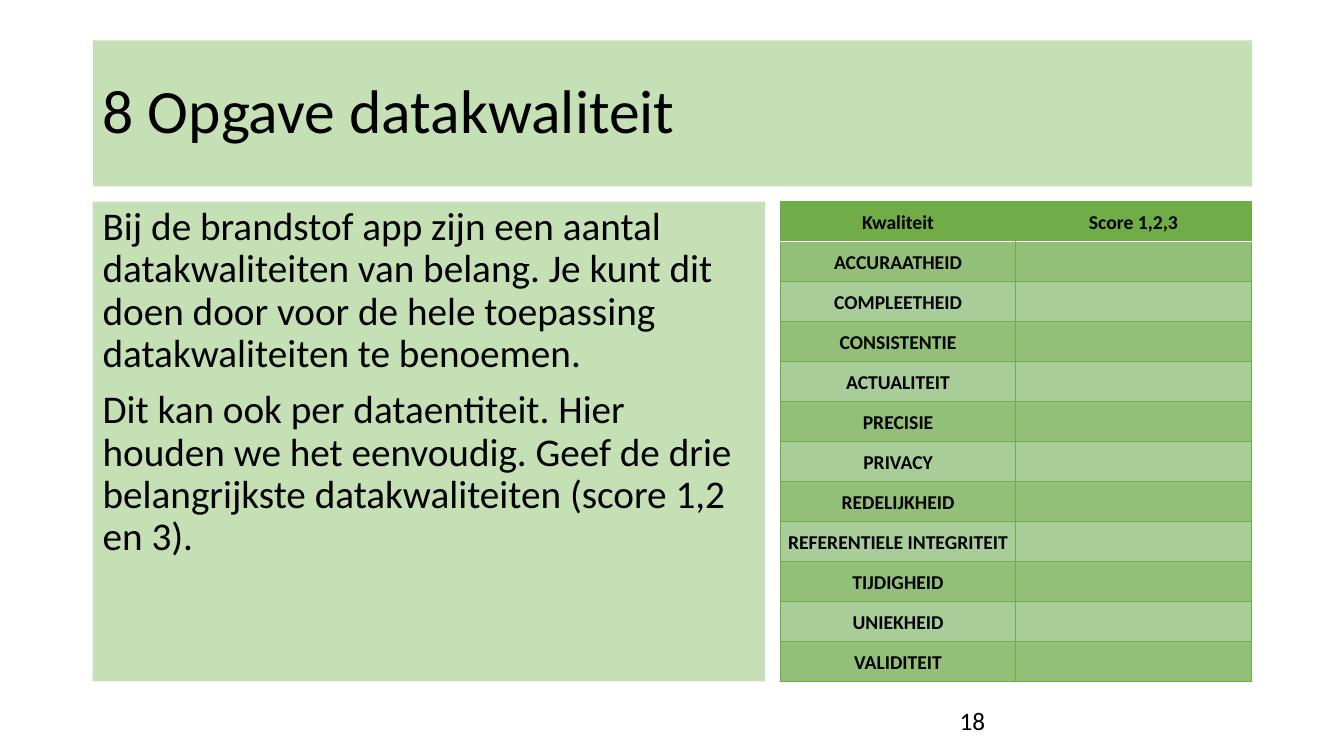
from dataclasses import dataclass

import pptx
import pptx.dml.color
import pptx.enum.text
import pptx.oxml
import pptx.oxml.ns
import pptx.util
from pptx.util import Inches

ALIGN = pptx.enum.text.PP_ALIGN
ANCHOR = pptx.enum.text.MSO_ANCHOR


@dataclass(frozen=True)
class Theme:
    font: str = "Calibri"
    text: str = "000000"
    panel: str = "C5E0B4"
    green: str = "70AD47"
    dark_row: str = "92C078"
    light_row: str = "A9CD99"
    white: str = "FFFFFF"
    title_size: int = 44
    body_size: int = 28
    number_size: int = 18
    table_size: int = 14


@dataclass(frozen=True)
class Box:
    left: float
    top: float
    width: float
    height: float

    def lengths(self) -> tuple:
        return tuple(Inches(v) for v in (self.left, self.top, self.width, self.height))


@dataclass(frozen=True)
class Edge:
    color: str | None
    width: float = 0.5


THEME = Theme()
TITLE_BOX = Box(0.92, 0.4, 11.5, 1.45)
BODY_BOX = Box(0.92, 2, 6.67, 4.76)
TABLE_BOX = Box(7.74, 2, 4.67, 4.76)
NUMBER_BOX = Box(9.42, 6.95, 3, 0.4)

BODY = [
    "Bij de brandstof app zijn een aantal datakwaliteiten van belang. Je kunt dit "
    "doen door voor de hele toepassing datakwaliteiten te benoemen.",
    "Dit kan ook per dataentiteit. Hier houden we het eenvoudig. Geef de drie "
    "belangrijkste datakwaliteiten (score 1,2 en 3).",
]
HEADER = ["Kwaliteit", "Score 1,2,3"]
QUALITIES = [
    "ACCURAATHEID", "COMPLEETHEID", "CONSISTENTIE", "ACTUALITEIT", "PRECISIE", "PRIVACY",
    "REDELIJKHEID", "REFERENTIELE INTEGRITEIT", "TIJDIGHEID", "UNIEKHEID", "VALIDITEIT",
]


def rgb(color: str) -> pptx.dml.color.RGBColor:
    return pptx.dml.color.RGBColor.from_string(color)


def paint(fill, color: str) -> None:
    fill.solid()
    fill.fore_color.rgb = rgb(color)


def style(p, size: int, align=ALIGN.LEFT, spacing: float = 1.0, bold: bool = False) -> None:
    p.alignment = align
    p.line_spacing = spacing
    p.font.name = THEME.font
    p.font.size = pptx.util.Pt(size)
    p.font.bold = bold
    p.font.color.rgb = rgb(THEME.text)


def fill_text(sp, lines: list[str], size: int, anchor, spacing: float, gap: float = 0) -> None:
    tf = sp.text_frame
    tf.word_wrap = True
    tf.auto_size = pptx.enum.text.MSO_AUTO_SIZE.NONE
    tf.vertical_anchor = anchor
    for i, line in enumerate(lines):
        p = tf.add_paragraph() if i else tf.paragraphs[0]
        p.text = line
        style(p, size, spacing=spacing)
        if i:
            p.space_before = pptx.util.Pt(gap)


def set_edges(cell, edges: dict[str, Edge]) -> None:
    tc_pr = cell._tc.get_or_add_tcPr()
    for side in "LRTB":
        edge = edges[side]
        paint_xml = (f'<a:solidFill><a:srgbClr val="{edge.color}"/></a:solidFill>'
                     if edge.color else "<a:noFill/>")
        tc_pr.append(pptx.oxml.parse_xml(
            f'<a:ln{side} {pptx.oxml.ns.nsdecls("a")} w="{pptx.util.Pt(edge.width)}">'
            f"{paint_xml}</a:ln{side}>"))


def cell_edges(row: int, col: int) -> dict[str, Edge]:
    edges = {side: Edge(THEME.green) for side in "LRTB"}
    if row == 0:
        edges["R" if col == 0 else "L"] = Edge(None)
        edges["B"] = Edge(THEME.white, 1)
    elif row == 1:
        edges["T"] = Edge(THEME.white, 1)
    return edges


def add_score_table(s, box: Box) -> None:
    rows = [HEADER] + [[quality, ""] for quality in QUALITIES]
    table = s.shapes.add_table(len(rows), len(HEADER), *box.lengths()).table
    table.horz_banding = False
    for column in table.columns:
        column.width = Inches(box.width / len(HEADER))
    for r, values in enumerate(rows):
        table.rows[r].height = Inches(box.height / len(rows))
        color = THEME.green if r == 0 else THEME.dark_row if r % 2 else THEME.light_row
        for c, value in enumerate(values):
            cell = table.cell(r, c)
            cell.margin_left = cell.margin_right = Inches(0.02)
            cell.margin_top = cell.margin_bottom = 0
            cell.vertical_anchor = ANCHOR.MIDDLE
            set_edges(cell, cell_edges(r, c))
            paint(cell.fill, color)
            p = cell.text_frame.paragraphs[0]
            p.text = value
            style(p, THEME.table_size, ALIGN.CENTER, 1.1, bold=True)


def main() -> None:
    prs = pptx.Presentation()
    prs.slide_width, prs.slide_height = Inches(13.33), Inches(7.5)
    s = prs.slides.add_slide(prs.slide_layouts.get_by_name("Title Only"))

    # Title
    title = s.shapes.title
    title.left, title.top, title.width, title.height = TITLE_BOX.lengths()
    paint(title.fill, THEME.panel)
    fill_text(title, ["8 Opgave datakwaliteit"], THEME.title_size, ANCHOR.MIDDLE, 0.9)

    # Assignment text
    body = s.shapes.add_textbox(*BODY_BOX.lengths())
    paint(body.fill, THEME.panel)
    fill_text(body, BODY, THEME.body_size, ANCHOR.TOP, 0.9, gap=10)

    # Score table
    add_score_table(s, TABLE_BOX)

    # Slide number
    number = s.shapes.add_textbox(*NUMBER_BOX.lengths())
    fill_text(number, ["18"], THEME.number_size, ANCHOR.TOP, 1.0)

    prs.save("out.pptx")


if __name__ == "__main__":
    main()
